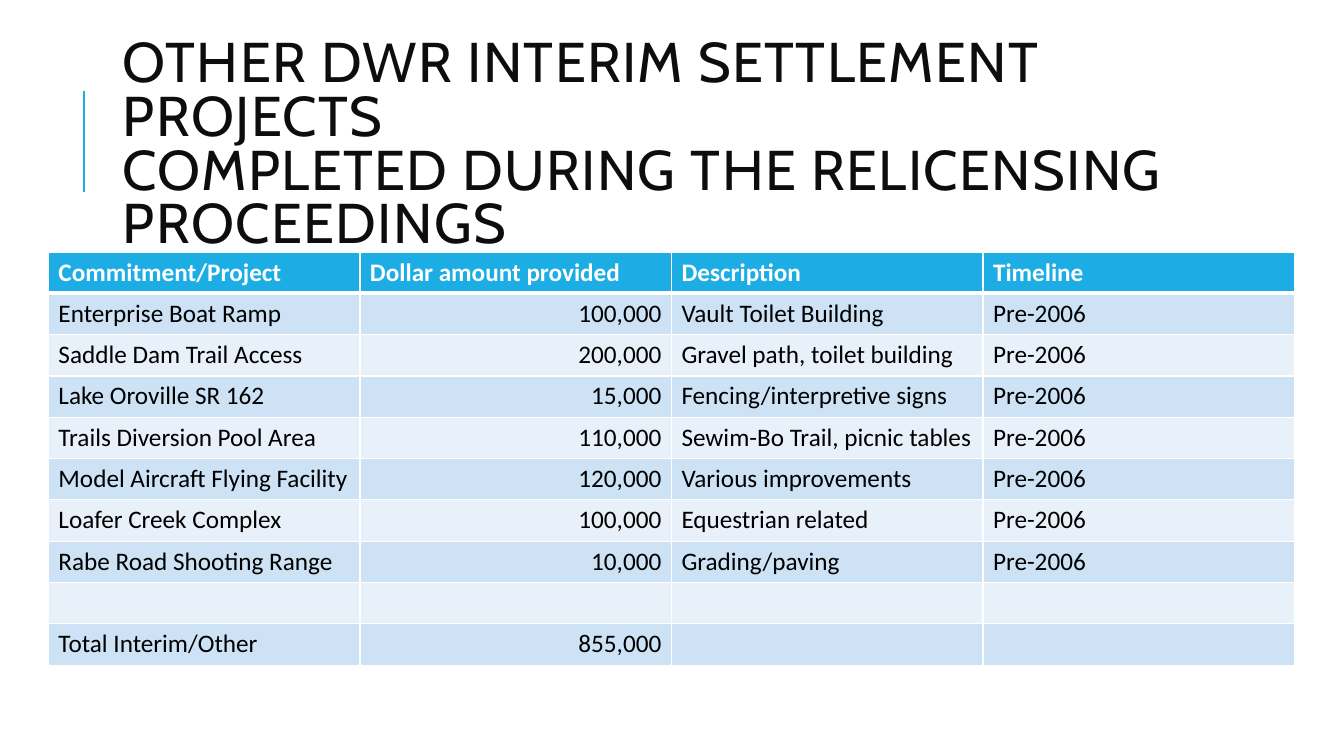
import pptx
import pptx.util
import pptx.dml.color
import pptx.enum.shapes
import pptx.enum.text
import pptx.oxml
import pptx.oxml.ns

PX = 9144
COLORS = {
    "accent": "1CADE4",
    "title": "0D0D0D",
    "body": "000000",
    "white": "FFFFFF",
    "odd": "CDE3F5",
    "even": "E8F1FA",
}
TITLE_LINES = [
    "OTHER DWR INTERIM SETTLEMENT PROJECTS",
    "COMPLETED DURING THE RELICENSING PROCEEDINGS",
]
ROWS = [
    ["Commitment/Project", "Dollar amount provided", "Description", "Timeline"],
    ["Enterprise Boat Ramp", "100,000", "Vault Toilet Building", "Pre-2006"],
    ["Saddle Dam Trail Access", "200,000", "Gravel path, toilet building", "Pre-2006"],
    ["Lake Oroville SR 162", "15,000", "Fencing/interpretive signs", "Pre-2006"],
    ["Trails Diversion Pool Area", "110,000", "Sewim-Bo Trail, picnic tables", "Pre-2006"],
    ["Model Aircraft Flying Facility", "120,000", "Various improvements", "Pre-2006"],
    ["Loafer Creek Complex", "100,000", "Equestrian related", "Pre-2006"],
    ["Rabe Road Shooting Range", "10,000", "Grading/paving", "Pre-2006"],
    ["", "", "", ""],
    ["Total Interim/Other", "855,000", "", ""],
]
COLUMN_WIDTH = 309
ROW_HEIGHT = 41
AMOUNT_COLUMN = 1


def rgb(name):
    return pptx.dml.color.RGBColor.from_string(COLORS[name])


def add_span(para, text, font_name, size, color, bold=False):
    span = para.add_run()
    span.text = text
    span.font.name = font_name
    span.font.size = pptx.util.Pt(size)
    span.font.bold = bold
    span.font.color.rgb = rgb(color)
    return span


deck = pptx.Presentation()
deck.slide_width = 1333 * PX
deck.slide_height = 750 * PX
page = deck.slides.add_slide(deck.slide_layouts[6])

rule = page.shapes.add_connector(
    pptx.enum.shapes.MSO_CONNECTOR.STRAIGHT, 83 * PX, 190 * PX, 83 * PX, 90 * PX
)
rule.line.color.rgb = rgb("accent")
rule.line.width = pptx.util.Pt(1.5)
pptx.oxml.ns.qn("a:effectLst")
rule_properties = rule._element.spPr
rule_properties.append(
    pptx.oxml.parse_xml(f'<a:effectLst {pptx.oxml.ns.nsdecls("a")}/>')
)

title_box = page.shapes.add_textbox(112 * PX, 64 * PX, 1063 * PX, 164 * PX)
title_frame = title_box.text_frame
title_frame.word_wrap = True
title_frame.vertical_anchor = pptx.enum.text.MSO_ANCHOR.MIDDLE
title_para = title_frame.paragraphs[0]
title_para.line_spacing = 0.8
for index, line in enumerate(TITLE_LINES):
    if index:
        title_para.add_line_break()
    span = add_span(title_para, line, "Cabin", 40, "title")
    span.font._element.set("spc", "100")

table = page.shapes.add_table(
    len(ROWS), len(ROWS[0]), 48 * PX, 250 * PX,
    COLUMN_WIDTH * len(ROWS[0]) * PX, ROW_HEIGHT * len(ROWS) * PX,
).table
for column in table.columns:
    column.width = COLUMN_WIDTH * PX

for row_index, texts in enumerate(ROWS):
    table.rows[row_index].height = ROW_HEIGHT * PX
    header = row_index == 0
    fill = "accent" if header else "odd" if row_index % 2 else "even"
    borders = {
        "lnL": 1,
        "lnR": 1,
        "lnT": 3 if row_index == 1 else 1,
        "lnB": 3 if header else 1,
    }
    for column_index, text in enumerate(texts):
        cell = table.cell(row_index, column_index)
        properties = cell._tc.get_or_add_tcPr()
        for tag, width in borders.items():
            properties.append(pptx.oxml.parse_xml(
                f'<a:{tag} {pptx.oxml.ns.nsdecls("a")} w="{pptx.util.Pt(width)}">'
                f'<a:solidFill><a:srgbClr val="{COLORS["white"]}"/></a:solidFill></a:{tag}>'
            ))
        cell.fill.solid()
        cell.fill.fore_color.rgb = rgb(fill)
        para = cell.text_frame.paragraphs[0]
        if column_index == AMOUNT_COLUMN and not header:
            para.alignment = pptx.enum.text.PP_ALIGN.RIGHT
        if text:
            add_span(para, text, "Calibri", 18, "white" if header else "body", header)

deck.save("out.pptx")
